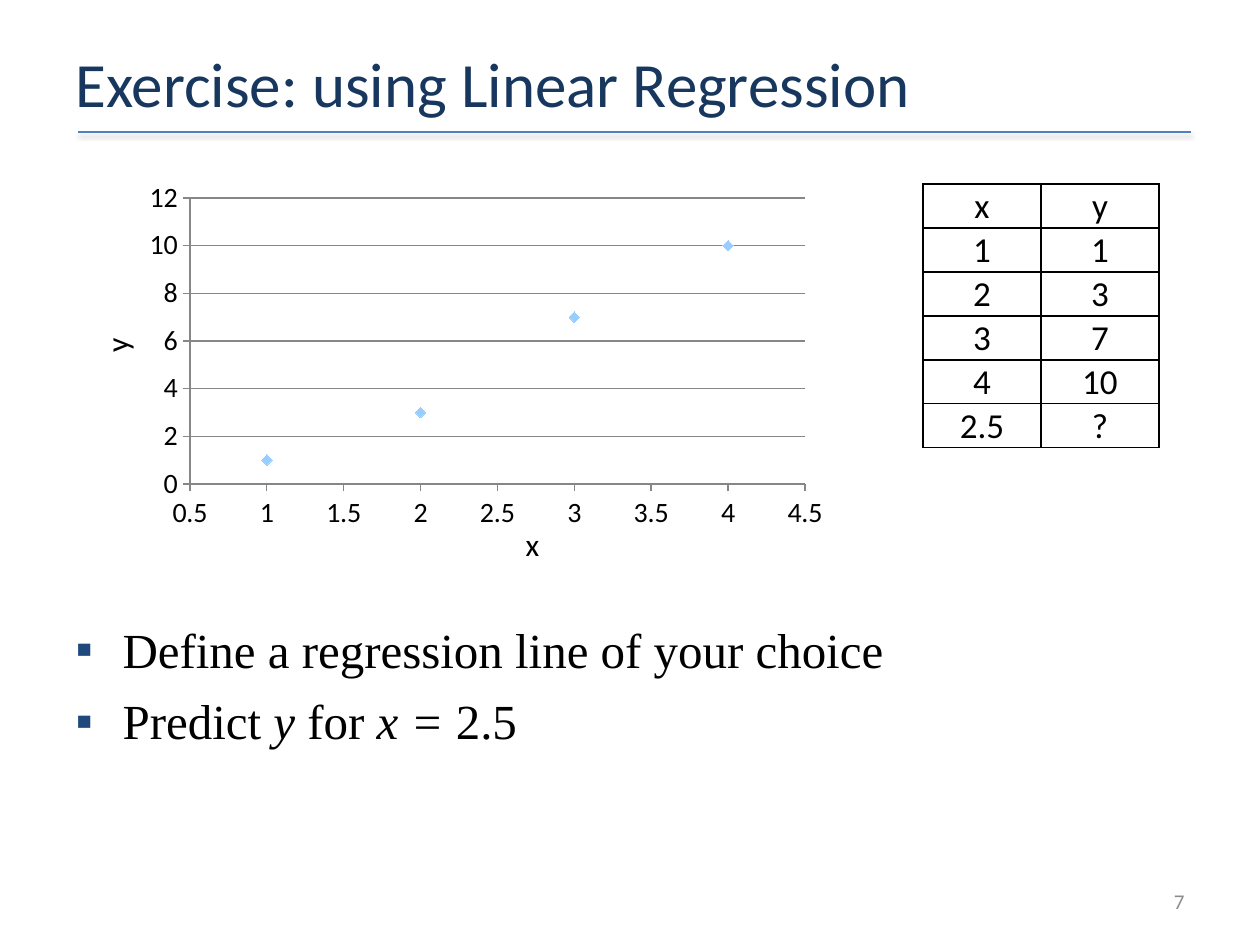
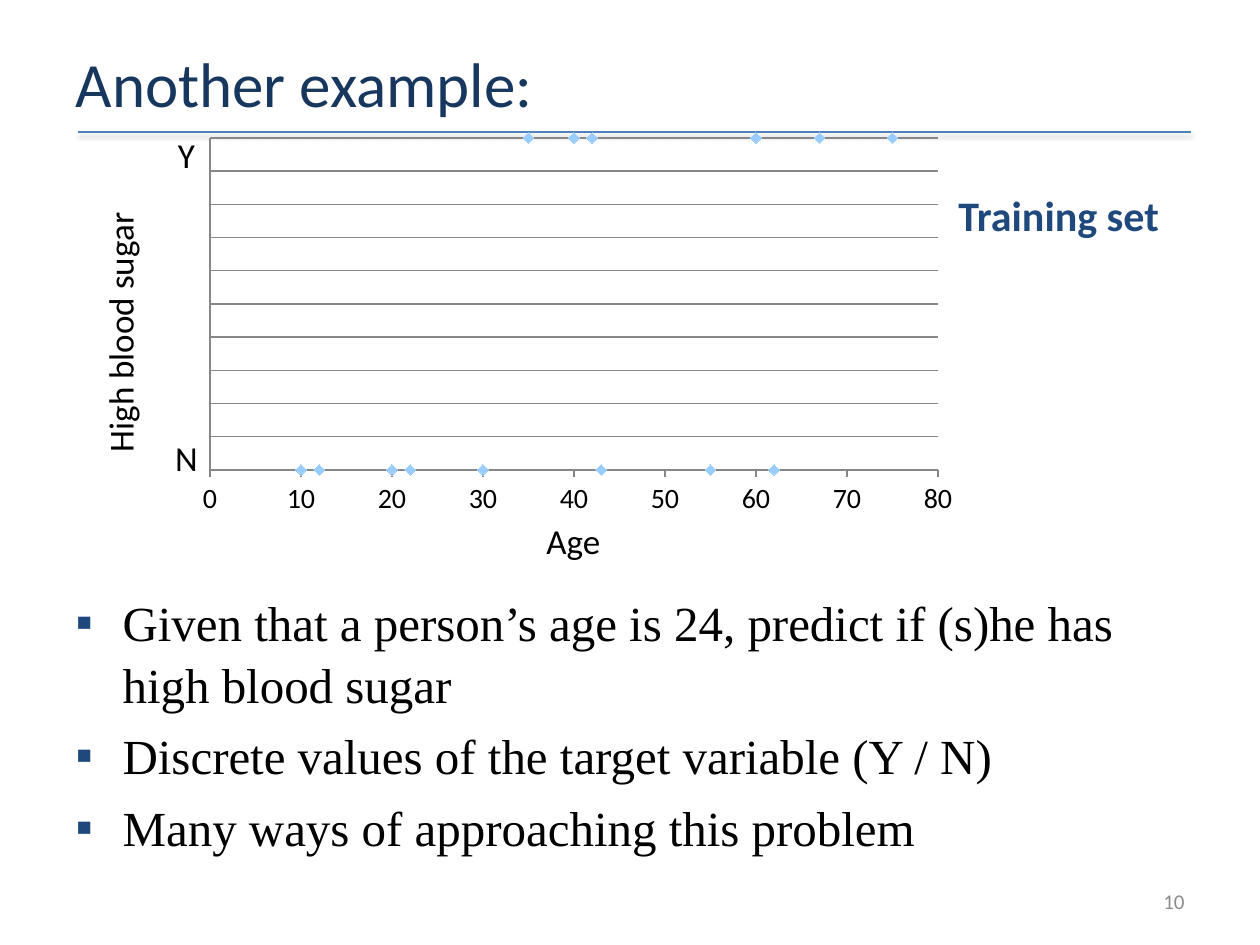
import lxml.etree
import pptx
import pptx.chart.data
import pptx.dml.color
import pptx.enum.chart
import pptx.enum.shapes
import pptx.enum.text
import pptx.oxml
import pptx.oxml.ns
import pptx.util

RGB = pptx.dml.color.RGBColor
ALIGN = pptx.enum.text.PP_ALIGN
ANCHOR = pptx.enum.text.MSO_ANCHOR
TICK = pptx.enum.chart.XL_TICK_MARK
TICK_LABEL = pptx.enum.chart.XL_TICK_LABEL_POSITION

NAVY = RGB(0x17, 0x37, 0x5E)
BLUE = RGB(0x1F, 0x49, 0x7D)
RULE_BLUE = RGB(0x4F, 0x81, 0xBD)
POINT_BLUE = RGB(0x99, 0xCC, 0xFF)
GRID_GRAY = RGB(0x87, 0x87, 0x87)
NUMBER_GRAY = RGB(0x8C, 0x8C, 0x8C)
BLACK = RGB(0, 0, 0)

SANS = "Calibri"
SERIF = "Times New Roman"
PX_PER_INCH = 126
TITLE_BOX = (63, 38, 1134, 89)
NUMBER_BOX = (903, 876, 294, 50)
RULE_LEFT, RULE_RIGHT, RULE_Y = 78, 1191, 132
BULLET_INDENT = 47


def px(length):
    """Turn px into EMU."""
    return pptx.util.Emu(round(length * 914400 / PX_PER_INCH))


def place(shape, box):
    """Move a shape to a box of left, top, width and height."""
    shape.left, shape.top, shape.width, shape.height = map(px, box)


def add_element(parent, tag, **attributes):
    """Append a DrawingML or chart element and return it."""
    element = lxml.etree.SubElement(parent, pptx.oxml.ns.qn(tag))
    for name, value in attributes.items():
        element.set(name, str(value))
    return element


def style(font, size, color, face=SANS, bold=False, italic=False):
    """Format a font."""
    font.size = pptx.util.Pt(size)
    font.name = face
    font.bold = bold
    font.italic = italic
    font.color.rgb = color


def add_run(paragraph, text, *look, **options):
    """Add one formatted run to a paragraph."""
    run = paragraph.add_run()
    run.text = text
    style(run.font, *look, **options)


def add_label(slide, box, text, size, color=BLACK, align=ALIGN.CENTER,
              anchor=ANCHOR.TOP, bold=False, rotation=0):
    """Add a one-line text box."""
    label = slide.shapes.add_textbox(*map(px, box))
    label.rotation = rotation
    label.text_frame.word_wrap = True
    label.text_frame.vertical_anchor = anchor
    paragraph = label.text_frame.paragraphs[0]
    paragraph.alignment = align
    add_run(paragraph, text, size, color, bold=bold)


def add_title_rule(slide):
    """Draw the shadowed line below the title."""
    rule = slide.shapes.add_connector(
        pptx.enum.shapes.MSO_CONNECTOR.STRAIGHT,
        px(RULE_LEFT), px(RULE_Y), px(RULE_RIGHT), px(RULE_Y))
    rule.line.color.rgb = RULE_BLUE
    rule.line.width = pptx.util.Pt(1)
    effects = add_element(rule._element.spPr, "a:effectLst")
    shadow = add_element(effects, "a:outerShdw", blurRad=pptx.util.Pt(3.1),
                         dist=pptx.util.Pt(1.6), dir=5400000, rotWithShape=0)
    shade = add_element(shadow, "a:srgbClr", val=BLACK)
    add_element(shade, "a:alpha", val=38000)


def add_bullets(body, box, items):
    """Fill the body with bullets, each a list of (text, italic) runs."""
    place(body, box)
    frame = body.text_frame
    frame.auto_size = pptx.enum.text.MSO_AUTO_SIZE.NONE
    for index, item in enumerate(items):
        paragraph = frame.add_paragraph() if index else frame.paragraphs[0]
        paragraph.line_spacing = 1.05
        paragraph.space_before = pptx.util.Pt(5.6)
        for text, italic in item:
            add_run(paragraph, text, 28, BLACK, face=SERIF, italic=italic)
        properties = paragraph._p.get_or_add_pPr()
        properties.set("marL", str(px(BULLET_INDENT)))
        properties.set("indent", str(-px(BULLET_INDENT)))
        bullet_color = add_element(properties, "a:buClr")
        add_element(bullet_color, "a:srgbClr", val=BLUE)
        add_element(properties, "a:buFont", typeface="Arial")
        add_element(properties, "a:buChar", char="▪")


def add_content_slide(deck, title, number, body_box, items):
    """Add a slide with title, rule, bullets and slide number."""
    slide = deck.slides.add_slide(deck.slide_layouts[1])
    heading = slide.shapes.title
    place(heading, TITLE_BOX)
    heading.text_frame.auto_size = pptx.enum.text.MSO_AUTO_SIZE.NONE
    heading.text_frame.vertical_anchor = ANCHOR.MIDDLE
    paragraph = heading.text_frame.paragraphs[0]
    paragraph.alignment = ALIGN.LEFT
    add_run(paragraph, title, 36, NAVY)
    add_title_rule(slide)
    add_bullets(slide.placeholders[1], body_box, items)
    add_label(slide, NUMBER_BOX, number, 12, NUMBER_GRAY,
              align=ALIGN.RIGHT, anchor=ANCHOR.MIDDLE)
    return slide


def format_axis(axis, low, high, step, grid):
    """Set the range, lines and labels of an axis."""
    axis.minimum_scale, axis.maximum_scale = low, high
    axis.major_unit = step
    axis.major_tick_mark = TICK.OUTSIDE
    axis.minor_tick_mark = TICK.NONE
    axis.has_major_gridlines = grid
    axis.tick_labels.number_format = "General"
    axis.tick_labels.number_format_is_linked = False
    style(axis.tick_labels.font, 16, BLACK)
    lines = [axis.format.line]
    if grid:
        lines.append(axis.major_gridlines.format.line)
    for line in lines:
        line.color.rgb = GRID_GRAY
        line.width = pptx.util.Pt(0.75)


def set_plot_box(chart, chart_box, plot_box):
    """Fix the inner plot area inside the chart."""
    left, top, width, height = chart_box
    plot_left, plot_top, plot_width, plot_height = plot_box
    area = chart._chartSpace.chart.plotArea
    for previous in area.findall(pptx.oxml.ns.qn("c:layout")):
        area.remove(previous)
    layout = pptx.oxml.parse_xml(
        f'<c:layout {pptx.oxml.ns.nsdecls("c")}/>')
    area.insert(0, layout)
    manual = add_element(layout, "c:manualLayout")
    for tag, value in (("layoutTarget", "inner"), ("xMode", "edge"),
                       ("yMode", "edge"),
                       ("x", (plot_left - left) / width),
                       ("y", (plot_top - top) / height),
                       ("w", plot_width / width),
                       ("h", plot_height / height)):
        add_element(manual, f"c:{tag}", val=value)


def add_scatter(slide, box, plot_box, points, x_range, y_range):
    """Add a scatter chart of (x, y) points and return it."""
    data = pptx.chart.data.XyChartData()
    series_data = data.add_series("Series 1")
    for x, y in points:
        series_data.add_data_point(x, y)
    chart = slide.shapes.add_chart(
        pptx.enum.chart.XL_CHART_TYPE.XY_SCATTER, *map(px, box), data).chart
    chart.has_title = False
    chart.has_legend = False
    style(chart.font, 10, BLACK)
    plot = chart.plots[0]
    plot.vary_by_categories = False
    series = plot.series[0]
    series.format.line.fill.background()
    marker = series.marker
    marker.style = pptx.enum.chart.XL_MARKER_STYLE.DIAMOND
    marker.size = 6
    marker.format.fill.solid()
    marker.format.fill.fore_color.rgb = POINT_BLUE
    marker.format.line.fill.background()
    format_axis(chart.category_axis, *x_range, grid=False)
    format_axis(chart.value_axis, *y_range, grid=True)
    set_plot_box(chart, box, plot_box)
    return chart


def add_value_table(slide, box, rows):
    """Add the bordered table of x and y values."""
    table = slide.shapes.add_table(
        len(rows), len(rows[0]), *map(px, box)).table
    table.first_row = False
    table.horz_banding = False
    for row, values in zip(table.rows, rows):
        row.height = px(box[3] / len(rows))
        for cell, value in zip(row.cells, values):
            cell.margin_left = cell.margin_right = cell.margin_top = px(1)
            cell.margin_bottom = 0
            cell.vertical_anchor = ANCHOR.BOTTOM
            paragraph = cell.text_frame.paragraphs[0]
            paragraph.alignment = ALIGN.CENTER
            add_run(paragraph, value, 20, BLACK)
            properties = cell._tc.get_or_add_tcPr()
            for side in "LRTB":
                border = add_element(properties, f"a:ln{side}",
                                     w=pptx.util.Pt(1))
                fill = add_element(border, "a:solidFill")
                add_element(fill, "a:srgbClr", val=BLACK)
            cell.fill.background()


def build_regression_slide(deck):
    """Build the linear regression exercise."""
    points = [(1, 1), (2, 3), (3, 7), (4, 10)]
    slide = add_content_slide(
        deck, "Exercise: using Linear Regression", "7", (63, 610, 1134, 234),
        [[("Define a regression line of your choice", False)],
         [("Predict ", False), ("y ", True), ("for ", False),
          ("x = ", True), ("2.5", False)]])
    add_scatter(slide, (136, 174, 700, 364), (190, 198, 615, 286), points,
                (0.5, 4.5, 0.5), (0, 12, 2))
    add_label(slide, (-44, 319, 323, 53), "y", 18, rotation=270)
    add_label(slide, (324, 519, 417, 53), "x", 18)
    rows = [("x", "y"), *((str(x), str(y)) for x, y in points), ("2.5", "?")]
    add_value_table(slide, (923, 184, 236, 264), rows)


def build_blood_sugar_slide(deck):
    """Build the classification example."""
    ages = [10, 20, 22, 12, 35, 55, 67, 43, 42, 60, 30, 40, 62, 75]
    high_sugar_ages = {35, 40, 42, 60, 67, 75}
    points = [(age, 100 if age in high_sugar_ages else 0) for age in ages]
    slide = add_content_slide(
        deck, "Another example:", "10", (63, 583, 1134, 261),
        [[("Given that a person’s age is 24, predict if (s)he has "
           "high blood sugar", False)],
         [("Discrete values of the target variable (Y / N)", False)],
         [("Many ways of approaching this problem", False)]])
    chart = add_scatter(slide, (188, 131, 780, 393), (210, 138, 728, 332),
                        points, (0, 80, 10), (0, 100, 10))
    chart.value_axis.major_tick_mark = TICK.NONE
    chart.value_axis.tick_label_position = TICK_LABEL.NONE
    add_label(slide, (-48, 305, 336, 55), "High blood sugar", 20,
              rotation=270)
    for answer, top in (("N", 430), ("Y", 127)):
        add_label(slide, (160, top, 53, 55), answer, 20)
    add_label(slide, (512, 513, 123, 55), "Age", 20)
    add_label(slide, (946, 183, 228, 63), "Training set", 24, BLUE,
              align=ALIGN.LEFT, bold=True)


def main():
    """Build and save the deck."""
    deck = pptx.Presentation()
    deck.slide_width, deck.slide_height = px(1260), px(945)
    build_regression_slide(deck)
    build_blood_sugar_slide(deck)
    deck.save("out.pptx")


if __name__ == "__main__":
    main()
